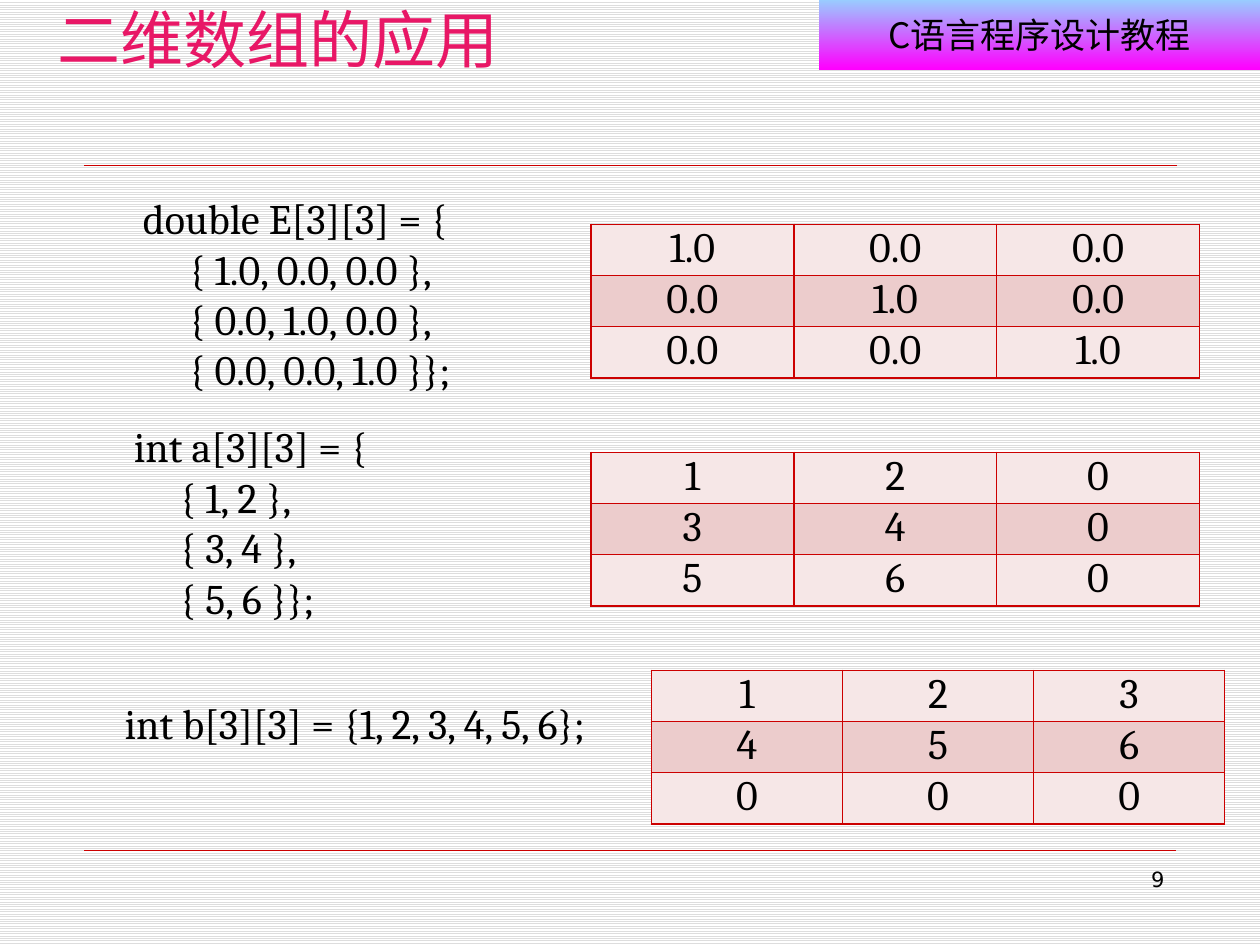
import pptx
import pptx.util
import pptx.dml.color
import pptx.enum.dml
import pptx.enum.shapes
import pptx.enum.text
import pptx.oxml
import pptx.oxml.ns

Inches = pptx.util.Inches
Pt = pptx.util.Pt
ALIGN = pptx.enum.text.PP_ALIGN
ANCHOR = pptx.enum.text.MSO_ANCHOR

COLORS = {
    "ink": "000000",
    "title": "E81766",
    "rule": "CC0000",
    "stripe": "DDDDDD",
    "paper": "FFFFFF",
    "banner_top": "99CCFF",
    "banner_bottom": "FF00FF",
    "row_light": "F6E7E7",
    "row_dark": "ECCCCC",
}
CODE_FONT = "Cambria"
EXAMPLES = [
    {
        "code": ["  double E[3][3] = {", "       { 1.0, 0.0, 0.0 },",
                 "       { 0.0, 1.0, 0.0 },", "       { 0.0, 0.0, 1.0 }};"],
        "code_box": (0.59, 1.48, 4.1, 1.7),
        "values": [["1.0", "0.0", "0.0"], ["0.0", "1.0", "0.0"], ["0.0", "0.0", "1.0"]],
        "table_box": (4.69, 1.78, 4.83, 1.22),
    },
    {
        "code": [" int a[3][3] = {", "      { 1, 2 },", "      { 3, 4 },", "      { 5, 6 }};"],
        "code_box": (0.59, 3.29, 4.33, 1.7),
        "values": [["1", "2", "0"], ["3", "4", "0"], ["5", "6", "0"]],
        "table_box": (4.69, 3.59, 4.83, 1.22),
    },
    {
        "code": ["int b[3][3] = {1, 2, 3, 4, 5, 6};"],
        "code_box": (0.59, 5.48, 4.5, 0.51),
        "values": [["1", "2", "3"], ["4", "5", "6"], ["0", "0", "0"]],
        "table_box": (5.17, 5.32, 4.55, 1.22),
    },
]


def color(name):
    return pptx.dml.color.RGBColor.from_string(COLORS[name])


def write_text(frame, text, size=24, font=CODE_FONT, ink="ink", align=ALIGN.LEFT, indent=0):
    for index, line in enumerate(text.split("\n")):
        para = frame.add_paragraph() if index else frame.paragraphs[0]
        para.alignment = align
        if indent:
            properties = para._p.get_or_add_pPr()
            properties.set("marL", "0")
            properties.set("indent", str(Inches(indent)))
        span = para.add_run()
        span.text = line
        span.font.size = Pt(size)
        span.font.name = font
        span.font.color.rgb = color(ink)
        east_asian = pptx.oxml.parse_xml(
            f'<a:ea {pptx.oxml.ns.nsdecls("a")} typeface="{font}"/>')
        span._r.rPr.find(pptx.oxml.ns.qn("a:latin")).addnext(east_asian)


def add_text(page, box, text, anchor=ANCHOR.TOP, wrap=True, grow=False, **style):
    shape = page.shapes.add_textbox(*map(Inches, box))
    frame = shape.text_frame
    frame.word_wrap = wrap
    frame.vertical_anchor = anchor
    if grow:
        frame.auto_size = pptx.enum.text.MSO_AUTO_SIZE.SHAPE_TO_FIT_TEXT
    write_text(frame, text, **style)
    return shape


def add_background(page):
    fill = page.background.fill
    fill.patterned()
    fill.pattern = pptx.enum.dml.MSO_PATTERN.LIGHT_HORIZONTAL
    fill.fore_color.rgb = color("stripe")
    fill.back_color.rgb = color("paper")


def add_rule(page, left, top, width):
    rule = page.shapes.add_connector(
        pptx.enum.shapes.MSO_CONNECTOR.STRAIGHT,
        Inches(left), Inches(top), Inches(left + width), Inches(top))
    rule.line.color.rgb = color("rule")
    rule.line.width = Pt(0.25)
    rule._element.spPr.append(
        pptx.oxml.parse_xml(f'<a:effectLst {pptx.oxml.ns.nsdecls("a")}/>'))


def add_banner(page, box):
    banner = page.shapes.add_shape(
        pptx.enum.shapes.MSO_SHAPE.RECTANGLE, *map(Inches, box))
    banner.shadow.inherit = False
    banner.line.fill.background()
    banner.fill.gradient()
    banner.fill.gradient_angle = 270
    for stop, name, position in zip(
            banner.fill.gradient_stops, ("banner_top", "banner_bottom"), (0, 1)):
        stop.color.rgb = color(name)
        stop.position = position
    banner.text_frame.vertical_anchor = ANCHOR.MIDDLE
    write_text(banner.text_frame, "C语言程序设计教程", size=20,
               font="Noto Sans CJK SC", align=ALIGN.CENTER)


def add_title(page, box):
    title = add_text(page, box, "二维数组的应用", wrap=False, size=36,
                     font="Noto Sans CJK JP", ink="title", align=ALIGN.CENTER)
    title.text_frame.margin_top = title.text_frame.margin_bottom = 0


def add_borders(cell):
    properties = cell._tc.get_or_add_tcPr()
    for index, side in enumerate(("lnL", "lnR", "lnT", "lnB")):
        properties.insert(index, pptx.oxml.parse_xml(
            f'<a:{side} {pptx.oxml.ns.nsdecls("a")} w="{Pt(1)}"><a:solidFill>'
            f'<a:srgbClr val="{COLORS["rule"]}"/></a:solidFill></a:{side}>'))


def add_matrix(page, box, values):
    left, top, width, height = box
    rows, columns = len(values), len(values[0])
    table = page.shapes.add_table(rows, columns, *map(Inches, box)).table
    table.first_row = table.horz_banding = False
    for column in table.columns:
        column.width = Inches(width / columns)
    for row_index, row in enumerate(values):
        table.rows[row_index].height = Inches(height / rows)
        for column_index, value in enumerate(row):
            cell = table.cell(row_index, column_index)
            cell.margin_left = cell.margin_right = Inches(0.08)
            cell.margin_top = cell.margin_bottom = 0
            cell.fill.solid()
            cell.fill.fore_color.rgb = color("row_dark" if row_index % 2 else "row_light")
            add_borders(cell)
            write_text(cell.text_frame, value, align=ALIGN.CENTER)


def add_example(page, code, code_box, values, table_box):
    add_text(page, code_box, "\n".join(code), anchor=ANCHOR.MIDDLE,
             wrap=len(code) > 1, grow=True, indent=0.3)
    add_matrix(page, table_box, values)


def main():
    deck = pptx.Presentation()
    deck.slide_width, deck.slide_height = Inches(10), Inches(7.5)
    page = deck.slides.add_slide(deck.slide_layouts[6])
    add_background(page)
    add_rule(page, 0.67, 6.75, 8.66)
    add_banner(page, (6.5, 0, 3.5, 0.55))
    add_title(page, (0.2, 0, 4.02, 0.41))
    add_rule(page, 0.67, 1.31, 8.67)
    add_text(page, (7.17, 6.83, 2.17, 0.52), "9", size=12,
             font="DejaVu Sans", align=ALIGN.RIGHT)
    for example in EXAMPLES:
        add_example(page, **example)
    deck.save("out.pptx")


if __name__ == "__main__":
    main()
